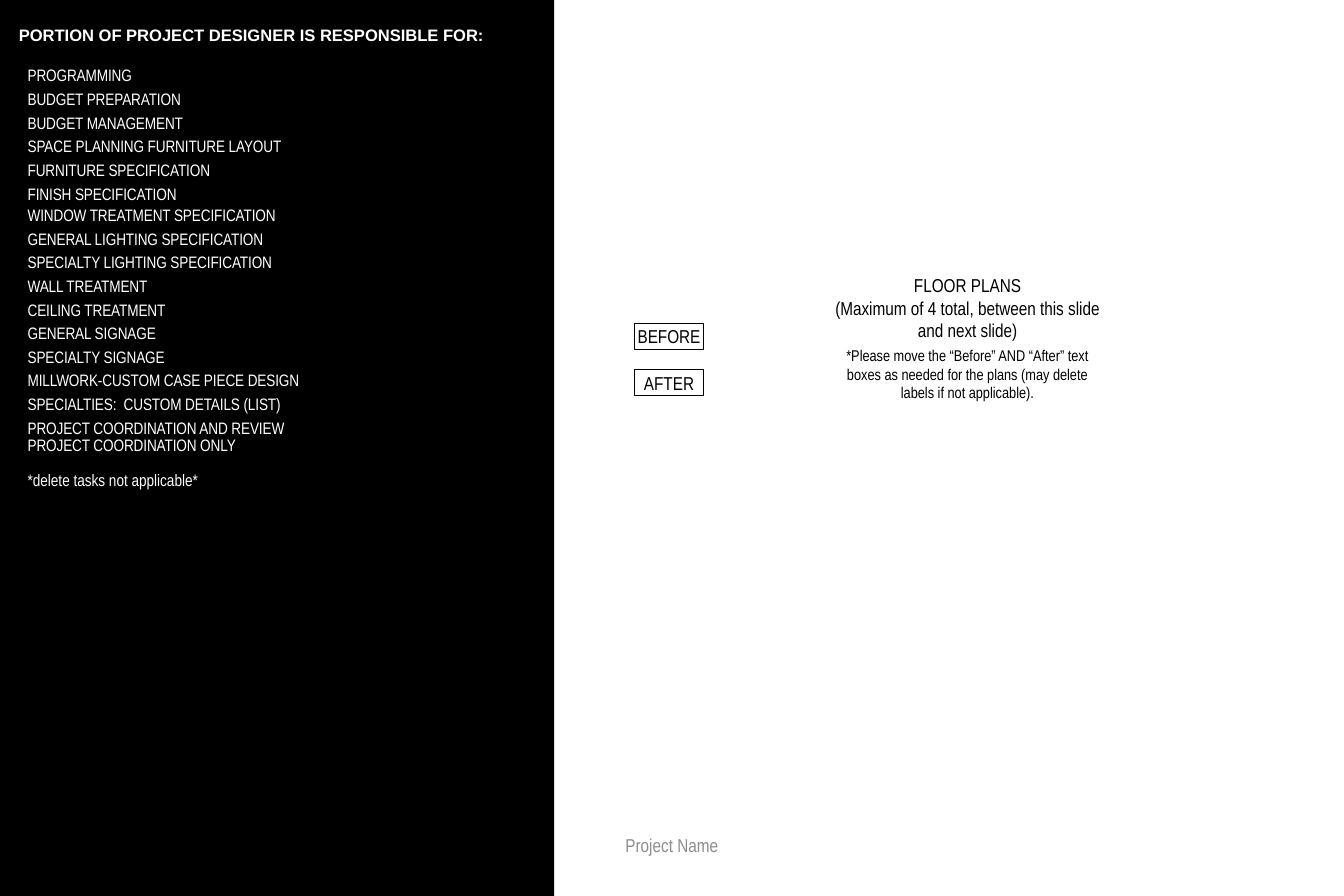
from dataclasses import dataclass

from pptx import Presentation
from pptx.dml.color import RGBColor
from pptx.enum.shapes import MSO_SHAPE
from pptx.enum.text import MSO_ANCHOR, PP_ALIGN
from pptx.util import Cm, Pt

RECTANGLE = MSO_SHAPE.RECTANGLE
LEFT, CENTER = PP_ALIGN.LEFT, PP_ALIGN.CENTER
TOP, MIDDLE = MSO_ANCHOR.TOP, MSO_ANCHOR.MIDDLE


@dataclass(frozen=True)
class Theme:
    black: RGBColor = RGBColor(0, 0, 0)
    white: RGBColor = RGBColor(255, 255, 255)
    gray: RGBColor = RGBColor(0x8C, 0x8C, 0x8C)
    heading_font: str = "Arial"
    body_font: str = "Arial Narrow"
    list_size: Pt = Pt(16)
    label_size: Pt = Pt(18)
    hint_size: Pt = Pt(15)


THEME = Theme()


def prepare_frame(shape, anchor=TOP):
    frame = shape.text_frame
    frame.word_wrap = True
    frame.vertical_anchor = anchor
    frame.margin_left = frame.margin_right = Cm(0)
    frame.margin_top = frame.margin_bottom = Cm(0)
    return frame


def write(paragraph, text, size, color, font=THEME.body_font, align=LEFT):
    paragraph.alignment = align
    run = paragraph.add_run()
    run.text = text
    run.font.name = font
    run.font.size = size
    run.font.color.rgb = color
    return run


presentation = Presentation()
presentation.slide_width = Cm(45.72)
presentation.slide_height = Cm(30.48)
slide = presentation.slides.add_slide(presentation.slide_layouts[6])
shapes = slide.shapes

panel = shapes.add_shape(RECTANGLE, Cm(0), Cm(0), Cm(18.85), Cm(30.48))
panel.shadow.inherit = False
panel.fill.solid()
panel.fill.fore_color.rgb = THEME.black
panel.line.fill.background()

project_name = shapes.add_textbox(Cm(15.54), Cm(28.35), Cm(14.63), Cm(1.52))
write(prepare_frame(project_name).paragraphs[0], "Project Name",
      THEME.label_size, THEME.gray, align=CENTER)

heading = shapes.add_textbox(Cm(0.64), Cm(0.84), Cm(17.4), Cm(1.07))
heading_run = write(prepare_frame(heading).paragraphs[0],
                    "PORTION OF PROJECT DESIGNER IS RESPONSIBLE FOR:",
                    THEME.list_size, THEME.white, THEME.heading_font)
heading_run.font.bold = True

TASKS = [
    "PROGRAMMING",
    "BUDGET PREPARATION",
    "BUDGET MANAGEMENT",
    "SPACE PLANNING FURNITURE LAYOUT",
    "FURNITURE SPECIFICATION",
    "FINISH SPECIFICATION",
    "WINDOW TREATMENT SPECIFICATION",
    "GENERAL LIGHTING SPECIFICATION",
    "SPECIALTY LIGHTING SPECIFICATION",
    "WALL TREATMENT",
    "CEILING TREATMENT",
    "GENERAL SIGNAGE",
    "SPECIALTY SIGNAGE",
    "MILLWORK-CUSTOM CASE PIECE DESIGN",
    "SPECIALTIES:  CUSTOM DETAILS (LIST)",
    "PROJECT COORDINATION AND REVIEW",
    "PROJECT COORDINATION ONLY",
]
TASK_PITCH = Pt(22.75)
TIGHT_PITCH = Pt(16.9)
SPECIAL_PITCH = {
    "WINDOW TREATMENT SPECIFICATION": Pt(20.9),
    "PROJECT COORDINATION ONLY": TIGHT_PITCH,
}

task_box = shapes.add_textbox(Cm(0.94), Cm(2.1), Cm(14.66), Cm(14.8))
task_frame = prepare_frame(task_box)
for index, task in enumerate(TASKS):
    paragraph = task_frame.add_paragraph() if index else task_frame.paragraphs[0]
    paragraph.line_spacing = SPECIAL_PITCH.get(task, TASK_PITCH)
    run = write(paragraph, task, THEME.list_size, THEME.white)
    run._r.get_or_add_rPr().set("spc", "-10")

task_note = task_frame.add_paragraph()
task_note.line_spacing = TIGHT_PITCH
task_note.space_before = TIGHT_PITCH
write(task_note, "*delete tasks not applicable*", THEME.list_size, THEME.white)

for index, caption in enumerate(["BEFORE", "AFTER"]):
    label = shapes.add_shape(RECTANGLE, Cm(21.59), Cm(11 + 1.57 * index), Cm(2.34), Cm(0.89))
    label.shadow.inherit = False
    label.fill.background()
    label.line.color.rgb = THEME.black
    label.line.width = Pt(0.75)
    write(prepare_frame(label, MIDDLE).paragraphs[0], caption,
          THEME.label_size, THEME.black, align=CENTER)

FLOOR_PLAN_LINES = [
    ("FLOOR PLANS", THEME.label_size, Pt(0)),
    ("(Maximum of 4 total, between this slide and next slide)", THEME.label_size, Pt(0)),
    ("*Please move the “Before” AND “After” text boxes as needed for the plans "
     "(may delete labels if not applicable).", THEME.hint_size, Pt(4.5)),
]
floor_plans = shapes.add_textbox(Cm(28.37), Cm(9.32), Cm(9.09), Cm(9.32))
floor_frame = prepare_frame(floor_plans)
for index, (text, size, space_before) in enumerate(FLOOR_PLAN_LINES):
    paragraph = floor_frame.add_paragraph() if index else floor_frame.paragraphs[0]
    paragraph.space_before = space_before
    write(paragraph, text, size, THEME.black, align=CENTER)

presentation.save("out.pptx")
